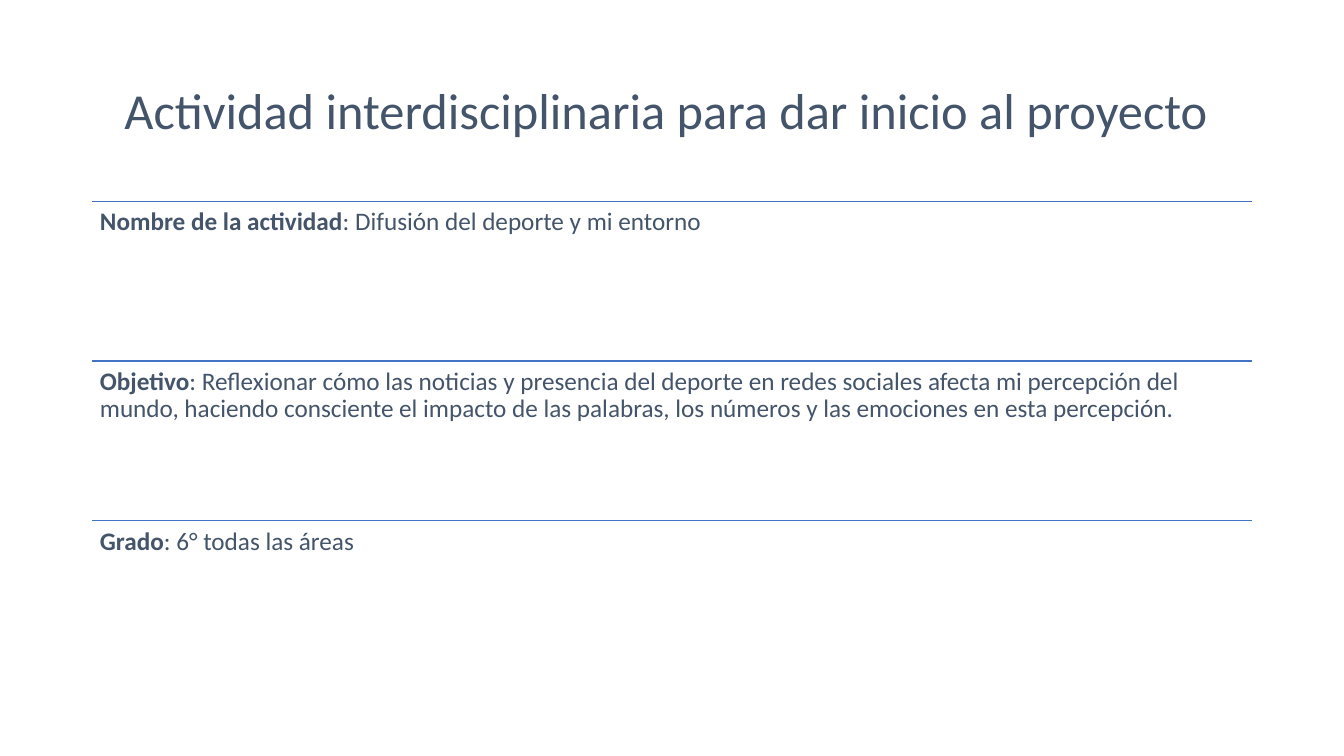
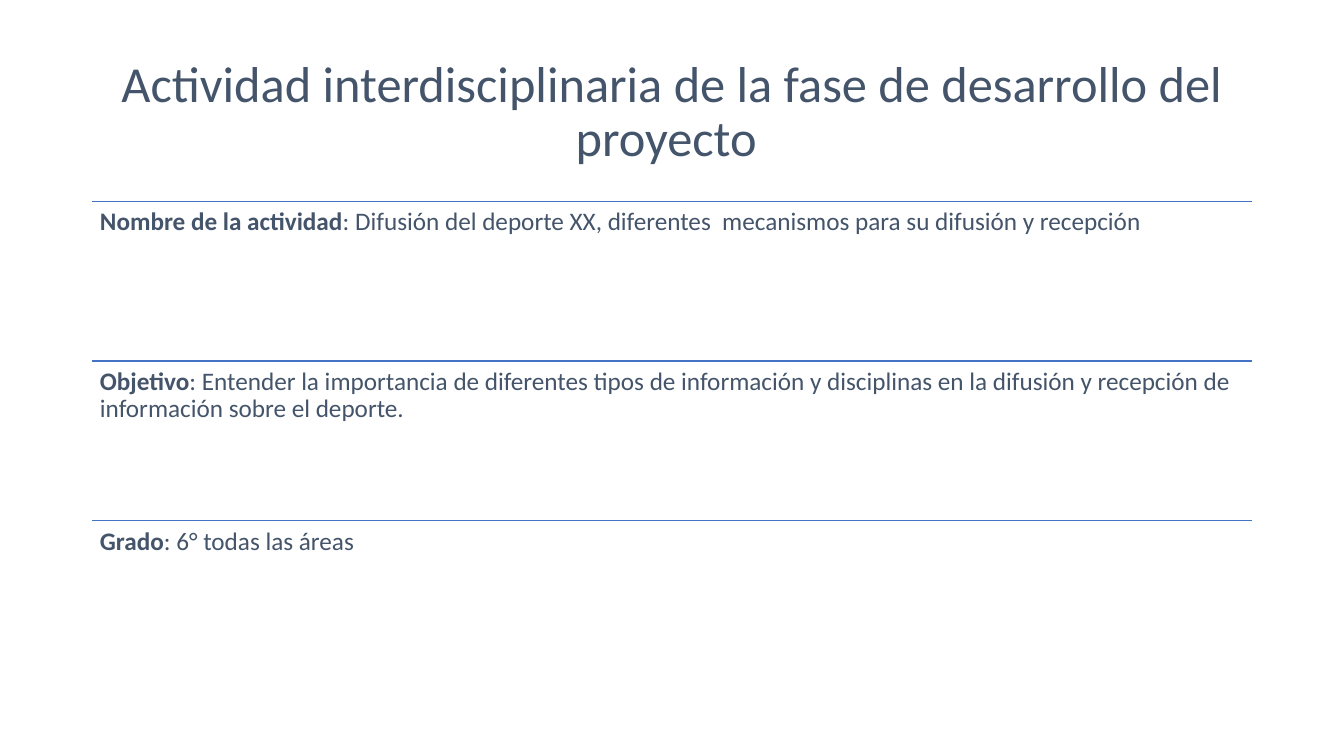
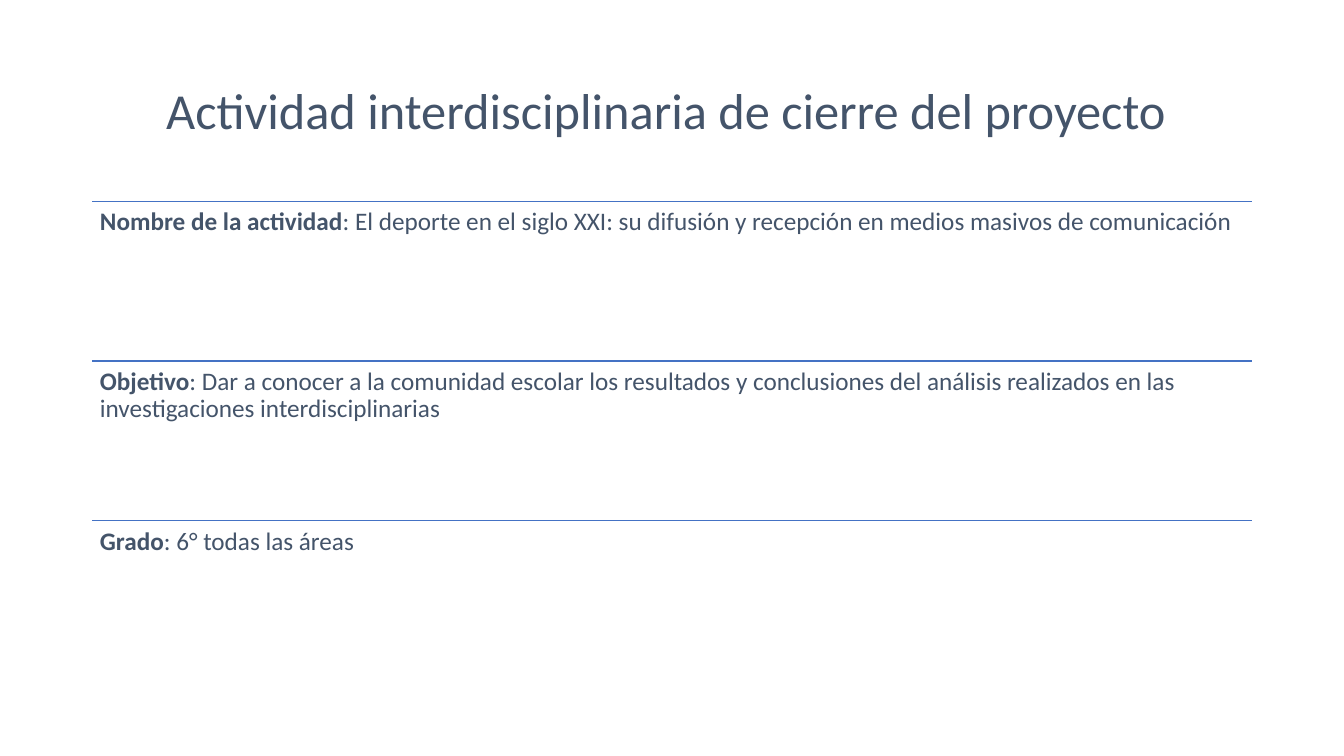
from pptx import Presentation
from pptx.dml.color import RGBColor as RGB
from pptx.enum.shapes import MSO_CONNECTOR as CONN
from pptx.enum.text import MSO_ANCHOR as ANCHOR, PP_ALIGN as ALIGN
from pptx.oxml.ns import qn
from pptx.util import Pt
from lxml import etree

# Content: title, then one text per label
LABELS = ["Nombre de la actividad", "Objetivo", "Grado"]
GRADE = "6° todas las áreas"
SLIDES = [
    ("Actividad interdisciplinaria para dar inicio al proyecto ", [
        "Difusión del deporte y mi entorno",
        "Reflexionar cómo las noticias y presencia del deporte en redes "
        "sociales afecta mi percepción del mundo, haciendo consciente el "
        "impacto de las palabras, los números y las emociones en esta "
        "percepción.",
        GRADE]),
    ("Actividad interdisciplinaria de la fase de desarrollo del proyecto ", [
        "Difusión del deporte XX, diferentes  mecanismos para su difusión "
        "y recepción",
        "Entender la importancia de diferentes tipos de información y "
        "disciplinas en la difusión y recepción de información sobre el "
        "deporte.",
        GRADE]),
    ("Actividad interdisciplinaria de cierre del proyecto ", [
        "El deporte en el siglo XXI: su difusión y recepción en medios "
        "masivos de comunicación",
        "Dar a conocer a la comunidad escolar los resultados y conclusiones "
        "del análisis realizados en las investigaciones interdisciplinarias",
        GRADE]),
]

# Shared style
COLORS = {"text": "44546A", "rule": "4472C4"}
FONT = "Calibri"
LEFT, WIDTH = 66, 828
TITLE_TOP, TITLE_H = 28.8, 104.4
ROW_TOP, ROW_H = 144, 114


def add_text(slide, top, height, size, runs, pads):
    box = slide.shapes.add_textbox(Pt(LEFT), Pt(top), Pt(WIDTH), Pt(height))
    frame = box.text_frame
    frame.word_wrap = True
    frame.margin_left = frame.margin_right = Pt(pads[0])
    frame.margin_top = frame.margin_bottom = Pt(pads[1])
    para = frame.paragraphs[0]
    para.line_spacing = 0.9
    para.font.name = FONT
    para.font.size = Pt(size)
    para.font.color.rgb = RGB.from_string(COLORS["text"])
    for text, bold in runs:
        run = para.add_run()
        run.text = text
        run.font.bold = bold
    return frame


def add_title(slide, text):
    frame = add_text(slide, TITLE_TOP, TITLE_H, 36, [(text, False)], (7.2, 3.6))
    frame.vertical_anchor = ANCHOR.MIDDLE
    frame.paragraphs[0].alignment = ALIGN.CENTER


def add_rule(slide, top):
    rule = slide.shapes.add_connector(
        CONN.STRAIGHT, Pt(LEFT), Pt(top), Pt(LEFT + WIDTH), Pt(top))
    rule.line.color.rgb = RGB.from_string(COLORS["rule"])
    rule.line.width = Pt(1)
    etree.SubElement(rule._element.spPr, qn("a:effectLst"))


def main():
    deck = Presentation()
    deck.slide_width, deck.slide_height = Pt(960), Pt(540)
    for title, texts in SLIDES:
        slide = deck.slides.add_slide(deck.slide_layouts[6])
        add_title(slide, title)
        # Ruled rows
        for row, (label, text) in enumerate(zip(LABELS, texts)):
            top = ROW_TOP + row * ROW_H
            add_rule(slide, top)
            add_text(slide, top, ROW_H, 18,
                     [(label, True), (": " + text, False)], (5.4, 5.4))
    deck.save("out.pptx")


if __name__ == "__main__":
    main()
